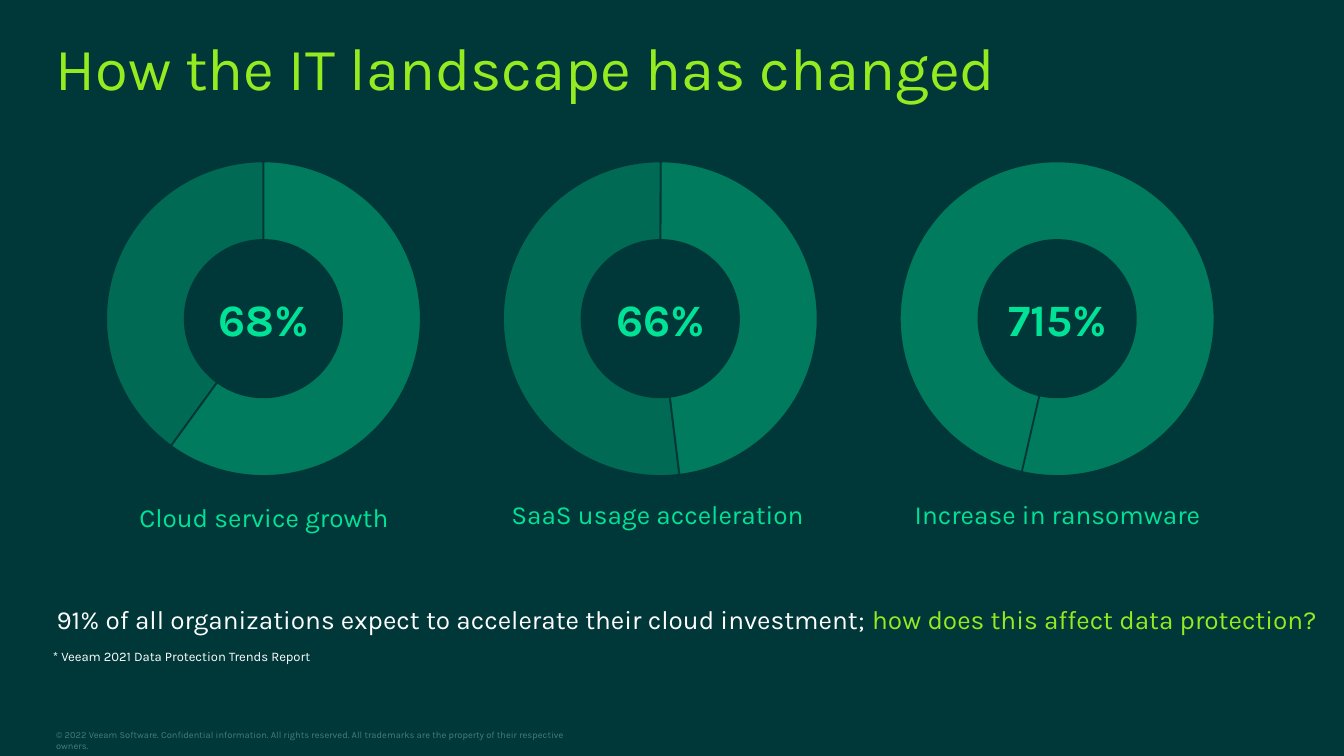
from dataclasses import dataclass
from typing import Optional

from lxml import etree
from pptx import Presentation
from pptx import util as u
from pptx.chart import data as cd
from pptx.dml.color import RGBColor
from pptx.enum import chart as ch
from pptx.enum import text
from pptx.oxml import ns

COLORS = {
    "background": "003738",
    "mint": "00E296",
    "lime": "93EB20",
    "white": "FFFFFF",
    "muted": "467D7D",
}
FONT = "Karla"
PITCH = 7.5


@dataclass
class Ring:
    """One doughnut with its figure and caption; lengths in centimetres."""
    figure: str
    caption: str
    shares: tuple[float, float]
    start: int
    figure_width: float = 2.62
    caption_top: float = 9.42


RINGS = [
    Ring("68%", "Cloud service growth", (0.4, 0.6), 216, caption_top=9.47),
    Ring("66%", "SaaS usage acceleration ", (0.52, 0.48), 173),
    Ring("715%", "Increase in ransomware", (0, 1), 193, figure_width=3.18),
]


def rgb(name: str) -> RGBColor:
    """Return the named colour."""
    return RGBColor.from_string(COLORS[name])


def add_text(s, runs: list[tuple[str, str]], left: float, top: float, width: float,
             height: float, *, size: float, bold: Optional[bool] = None,
             align: Optional[text.PP_ALIGN] = None, middle: bool = False,
             wrap: bool = True, inset: bool = False) -> None:
    """Add a one-paragraph text box made of (text, colour) runs."""
    sp = s.shapes.add_textbox(u.Cm(left), u.Cm(top), u.Cm(width), u.Cm(height))
    tf = sp.text_frame
    tf.word_wrap = wrap
    tf.vertical_anchor = text.MSO_ANCHOR.MIDDLE if middle else text.MSO_ANCHOR.TOP
    if not inset:
        tf.margin_left = tf.margin_right = tf.margin_top = tf.margin_bottom = 0
    p = tf.paragraphs[0]
    p.alignment = align
    for words, color in runs:
        r = p.add_run()
        r.text = words
        r.font.name = FONT
        r.font.size = u.Pt(size)
        r.font.bold = bold
        r.font.color.rgb = rgb(color)


def fill_point(point, color: str, opacity: int) -> None:
    """Fill a doughnut slice with a translucent colour and outline it."""
    fill = point.format.fill
    fill.solid()
    fill.fore_color.rgb = rgb(color)
    clr = fill._xPr.find(".//" + ns.qn("a:srgbClr"))
    etree.SubElement(clr, ns.qn("a:alpha"), val=str(opacity * 1000))
    point.format.line.color.rgb = rgb("background")
    point.format.line.width = u.Pt(1)


def set_ring_shape(chart, start: int, hole: int) -> None:
    """Set the first slice angle and the hole size of a doughnut chart."""
    doughnut = chart.plots[0]._element
    for tag, value in (("c:firstSliceAng", start), ("c:holeSize", hole)):
        doughnut.find(ns.qn(tag)).set("val", str(value))


def set_labels(series, count: int) -> None:
    """Format the series labels and switch them off on the drawn slices."""
    labels = series.data_labels
    labels.number_format = "0.00%"
    labels.number_format_is_linked = False
    labels.show_value = labels.show_category_name = True
    labels.font.name = FONT
    labels.font.size = u.Pt(12)
    labels.font.color.rgb = rgb("white")
    for i in range(count):
        label = etree.Element(ns.qn("c:dLbl"))
        etree.SubElement(label, ns.qn("c:idx"), val=str(i))
        etree.SubElement(label, ns.qn("c:delete"), val="1")
        labels._element.insert(i, label)


def add_ring(s, ring: Ring, offset: float) -> None:
    """Draw a doughnut chart with its figure and caption."""
    data = cd.CategoryChartData(number_format="0.00%")
    data.categories = ["Title1", "Title2"]
    data.add_series("Series 1", ring.shares)
    chart = s.shapes.add_chart(ch.XL_CHART_TYPE.DOUGHNUT, u.Cm(offset - 0.27), u.Cm(2.7),
                               u.Cm(10.5), u.Cm(6.65), data).chart
    chart.has_legend = False
    chart.has_title = False
    chart.font.name = FONT
    chart.font.size = u.Pt(10)
    chart.plots[0].vary_by_categories = True
    set_ring_shape(chart, ring.start, 75)
    series = chart.plots[0].series[0]
    for i, opacity in enumerate((30, 40)):
        fill_point(series.points[i], "mint", opacity)
    set_labels(series, len(ring.shares))

    center = text.PP_ALIGN.CENTER
    add_text(s, [(ring.figure, "mint")], offset + 4.99 - ring.figure_width / 2, 5.38,
             ring.figure_width, 1.27, size=24, bold=True, align=center, middle=True,
             wrap=False, inset=True)
    add_text(s, [(ring.caption, "mint")], offset + 1.14, ring.caption_top, 7.7, 0.61,
             size=14, align=center)


def main() -> None:
    """Build the slide."""
    prs = Presentation()
    prs.slide_width, prs.slide_height = u.Cm(25.4), u.Cm(14.29)
    s = prs.slides.add_slide(prs.slide_layouts[6])
    s.background.fill.solid()
    s.background.fill.fore_color.rgb = rgb("background")

    add_text(s, [("© 2022 Veeam Software. Confidential information. All rights reserved. "
                  "All trademarks are the property of their respective owners.", "muted")],
             1.06, 13.79, 10.19, 0.2, size=5)
    add_text(s, [("How the IT landscape has changed", "lime")],
             1.05, 0.58, 23.29, 1.47, size=32)
    for i, ring in enumerate(RINGS):
        add_ring(s, ring, i * PITCH)
    add_text(s, [("91% of all organizations expect to accelerate their cloud investment; ", "white"),
                 ("how does this affect data protection?", "lime")],
             0.82, 11.27, 24.41, 0.86, size=14, middle=True, inset=True)
    add_text(s, [("* Veeam 2021 Data Protection Trends Report", "white")],
             1, 12.12, 13.87, 0.58, size=7, middle=True)
    prs.save("out.pptx")


if __name__ == "__main__":
    main()
